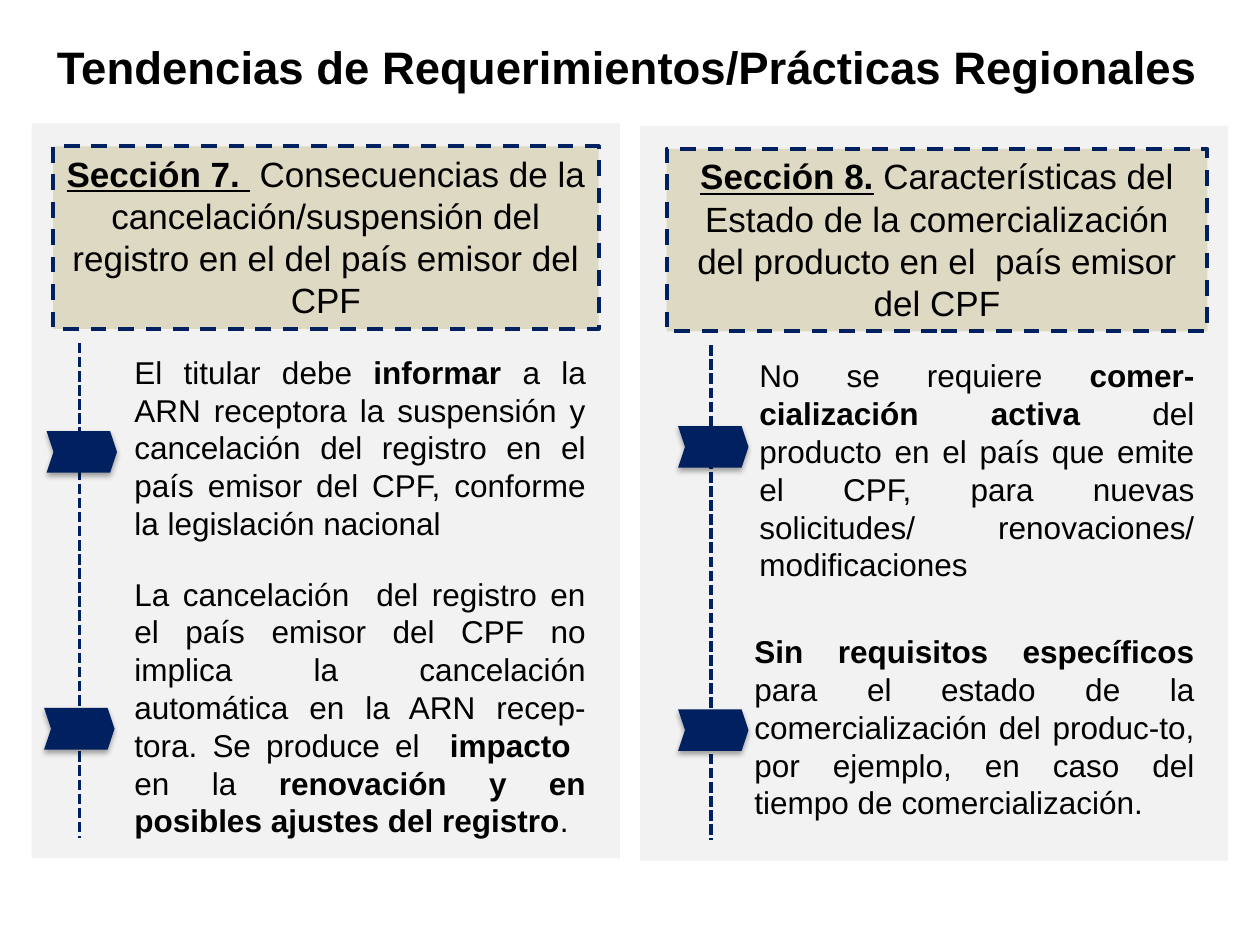
from dataclasses import dataclass

from lxml import etree
from pptx import Presentation
from pptx.dml.color import RGBColor
from pptx.enum.dml import MSO_LINE
from pptx.enum.shapes import MSO_CONNECTOR, MSO_SHAPE
from pptx.enum.text import MSO_ANCHOR, MSO_AUTO_SIZE, PP_ALIGN
from pptx.oxml import parse_xml
from pptx.oxml.ns import nsdecls, qn
from pptx.util import Cm, Pt


@dataclass(frozen=True)
class Theme:
    font: str = "Arial"
    text: RGBColor = RGBColor(0x00, 0x00, 0x00)
    panel: RGBColor = RGBColor(0xF2, 0xF2, 0xF2)
    header: RGBColor = RGBColor(0xDD, 0xD9, 0xC3)
    navy: RGBColor = RGBColor(0x00, 0x20, 0x60)
    title_size: int = 26
    header_size: int = 20
    body_size: int = 18


THEME = Theme()

TITLE = "Tendencias de Requerimientos/Prácticas Regionales"

# Boxes are left, top, width, height in cm; ** marks bold text.
SECTIONS = [
    dict(
        panel=(0.64, 2.49, 11.86, 14.81),
        header_box=(1.07, 2.95, 11, 3.68),
        header="**Sección 7. ** Consecuencias de la cancelación/suspensión del "
               "registro en el del país emisor del CPF",
        timeline=(1.6, 6.91),
        markers=[(0.94, 8.69), (0.89, 14.27)],
        items=[
            ((2.46, 6.99, 9.6, 4.11),
             "El titular debe **informar **a la ARN receptora la suspensión y "
             "cancelación del registro en el país emisor del CPF, conforme la "
             "legislación nacional"),
            ((2.46, 11.46, 9.6, 5.64),
             "La cancelación  del registro en el país emisor del CPF no implica "
             "la cancelación automática en la ARN recep-tora. Se produce el  "
             "**impacto ** en la **renovación y en posibles ajustes del "
             "registro**."),
        ],
    ),
    dict(
        panel=(12.9, 2.54, 11.86, 14.81),
        header_box=(13.44, 3, 10.9, 3.68),
        header="**Sección 8.** Características del Estado de la "
               "comercialización del producto en el  país emisor del CPF",
        timeline=(14.33, 6.96),
        markers=[(13.67, 8.59), (13.67, 14.3)],
        items=[
            ((15.06, 7.06, 9.27, 4.88),
             "No se requiere **comer-cialización activa** del producto en el "
             "país que emite el CPF, para nuevas solicitudes/ renovaciones/ "
             "modificaciones"),
            ((14.96, 12.62, 9.37, 4.11),
             "**Sin requisitos específicos **para el estado de la "
             "comercialización del produc-to, por ejemplo, en caso del tiempo "
             "de comercialización."),
        ],
    ),
]
TIMELINE_LENGTH = 9.98
MARKER_WIDTH, MARKER_HEIGHT, MARKER_NOTCH = 1.42, 0.84, 0.14


def cm_all(values):
    return [Cm(value) for value in values]


def write_text(shape, text, *, size, align, anchor=MSO_ANCHOR.TOP,
               auto_size=MSO_AUTO_SIZE.SHAPE_TO_FIT_TEXT, underline_bold=False):
    """Fill the shape with one paragraph, with ** switching bold on and off."""
    frame = shape.text_frame
    frame.word_wrap = True
    frame.auto_size = auto_size
    frame.vertical_anchor = anchor
    paragraph = frame.paragraphs[0]
    paragraph.alignment = align
    for index, part in enumerate(text.split("**")):
        if not part:
            continue
        bold = index % 2 == 1
        run = paragraph.add_run()
        run.text = part
        font = run.font
        font.name, font.size, font.bold = THEME.font, Pt(size), bold
        font.underline = bold and underline_bold
        font.color.rgb = THEME.text


def add_title(slide):
    title = slide.shapes.title
    title.left, title.top, title.width, title.height = cm_all((-0.05, 0.76, 25.4, 1.14))
    write_text(title, f"**{TITLE}**", size=THEME.title_size, align=PP_ALIGN.CENTER,
               anchor=MSO_ANCHOR.MIDDLE, auto_size=MSO_AUTO_SIZE.NONE)


def add_rectangle(slide, box, fill):
    rectangle = slide.shapes.add_shape(MSO_SHAPE.RECTANGLE, *cm_all(box))
    rectangle.shadow.inherit = False
    rectangle.fill.solid()
    rectangle.fill.fore_color.rgb = fill
    rectangle.line.fill.background()
    return rectangle


def add_header(slide, box, text):
    header = add_rectangle(slide, box, THEME.header)
    header.line.color.rgb = THEME.navy
    header.line.width = Pt(2.25)
    header.line.dash_style = MSO_LINE.DASH
    write_text(header, text, size=THEME.header_size, align=PP_ALIGN.CENTER,
               underline_bold=True)


def add_item(slide, box, text):
    item = slide.shapes.add_textbox(*cm_all(box))
    write_text(item, text, size=THEME.body_size, align=PP_ALIGN.JUSTIFY)


def add_dashed_line(group, left, top):
    line = group.shapes.add_connector(
        MSO_CONNECTOR.STRAIGHT, *cm_all((left, top, left, top + TIMELINE_LENGTH)))
    line.line.color.rgb = THEME.navy
    line.line.width = Pt(2)
    line.line.dash_style = MSO_LINE.SQUARE_DOT
    etree.SubElement(line._element.spPr, qn("a:effectLst"))


def add_marker(group, left, top):
    """Draw a notched arrow that points right and casts a soft shadow."""
    right, bottom = left + MARKER_WIDTH, top + MARKER_HEIGHT
    middle = top + MARKER_HEIGHT / 2
    points = [(right - MARKER_NOTCH, top), (left, top),
              (left + MARKER_NOTCH, middle), (left, bottom),
              (right - MARKER_NOTCH, bottom)]
    builder = group.shapes.build_freeform(Cm(right), Cm(middle))
    builder.add_line_segments([cm_all(point) for point in points], close=True)
    marker = builder.convert_to_shape()
    marker.fill.solid()
    marker.fill.fore_color.rgb = THEME.navy
    marker.line.fill.background()
    marker._element.spPr.append(parse_xml(
        f'<a:effectLst {nsdecls("a")}>'
        f'<a:outerShdw blurRad="{Pt(3.1)}" dist="{Pt(1.8)}" dir="5400000" rotWithShape="0">'
        '<a:srgbClr val="000000"><a:alpha val="35000"/></a:srgbClr>'
        '</a:outerShdw></a:effectLst>'))


def add_timeline(slide, start, markers):
    group = slide.shapes.add_group_shape()
    add_dashed_line(group, *start)
    for marker in markers:
        add_marker(group, *marker)


def add_section(slide, section):
    add_rectangle(slide, section["panel"], THEME.panel)
    add_header(slide, section["header_box"], section["header"])
    add_timeline(slide, section["timeline"], section["markers"])
    for box, text in section["items"]:
        add_item(slide, box, text)


def main():
    presentation = Presentation()
    presentation.slide_width, presentation.slide_height = Cm(25.4), Cm(19.05)
    title_only = presentation.slide_layouts[5]
    slide = presentation.slides.add_slide(title_only)
    add_title(slide)
    for section in SECTIONS:
        add_section(slide, section)
    presentation.save("out.pptx")


if __name__ == "__main__":
    main()
